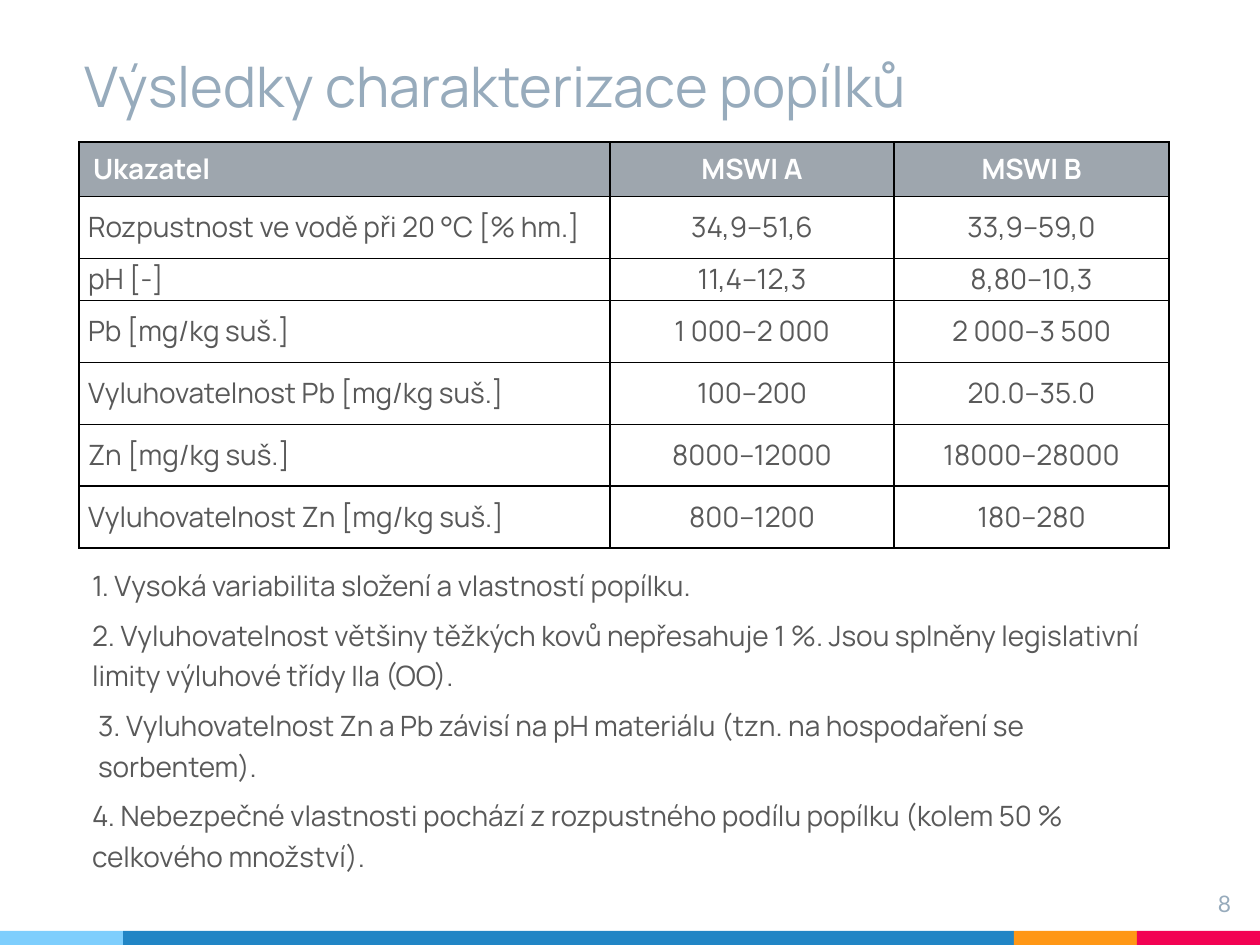
from lxml import etree
from pptx import Presentation
from pptx.dml.color import RGBColor
from pptx.enum.shapes import MSO_SHAPE
from pptx.enum.text import MSO_ANCHOR, MSO_AUTO_SIZE, PP_ALIGN
from pptx.oxml.ns import qn
from pptx.util import Pt

RECT = MSO_SHAPE.RECTANGLE
TOP, MIDDLE, BOTTOM = MSO_ANCHOR.TOP, MSO_ANCHOR.MIDDLE, MSO_ANCHOR.BOTTOM
LEFT, CENTER, RIGHT = PP_ALIGN.LEFT, PP_ALIGN.CENTER, PP_ALIGN.RIGHT
NO_FIT = MSO_AUTO_SIZE.NONE

PX = 914400 / 126
COLORS = {
    "title": "97ABBC", "text": "595959", "header": "9EA6AE", "white": "FFFFFF",
    "border": "000000", "sky": "7ECEFD", "blue": "2185C5", "orange": "FF9715",
    "red": "F20253",
}
BANDS = [("sky", 123), ("blue", 891), ("orange", 123), ("red", 123)]
COLUMNS = [531, 284, 275]
ROW_HEIGHTS = [49, 62, 42, 62, 62, 62, 62]
ROWS = [
    ("Ukazatel", "MSWI A", "MSWI B"),
    ("Rozpustnost ve vodě při 20 °C [% hm.]", "34,9–51,6", "33,9–59,0"),
    ("pH [-]", "11,4–12,3", "8,80–10,3"),
    ("Pb [mg/kg suš.]", "1 000–2 000", "2 000–3 500"),
    ("Vyluhovatelnost Pb [mg/kg suš.]", "100–200", "20.0–35.0"),
    ("Zn [mg/kg suš.]", "8000–12000", "18000–28000"),
    ("Vyluhovatelnost Zn [mg/kg suš.]", "800–1200", "180–280"),
]
FINDINGS = [
    ("1. Vysoká variabilita složení a vlastností popílku.", 0),
    ("2. Vyluhovatelnost většiny těžkých kovů nepřesahuje 1 %. Jsou splněny "
     "legislativní limity výluhové třídy IIa (OO).", 0),
    ("3. Vyluhovatelnost Zn a Pb závisí na pH materiálu (tzn. na hospodaření se "
     "sorbentem).", 6),
    ("4. Nebezpečné vlastnosti pochází z rozpustného podílu popílku (kolem 50 % "
     "celkového množství).", 0),
]


def px(n):
    """Turn pixels into EMU."""
    return round(n * PX)


def rgb(name):
    """Look up a colour by name."""
    return RGBColor.from_string(COLORS[name])


def place(s, x, y, w, h):
    """Move and size a shape."""
    s.left, s.top, s.width, s.height = px(x), px(y), px(w), px(h)


def set_frame(tf, anchor, dx, dy):
    """Set the anchor, wrapping and insets of a text frame."""
    tf.word_wrap, tf.auto_size, tf.vertical_anchor = True, NO_FIT, anchor
    tf.margin_left = tf.margin_right = px(dx)
    tf.margin_top = tf.margin_bottom = px(dy)


def add_run(p, text, size, color, font="Manrope", bold=False, align=LEFT):
    """Add a formatted run to a paragraph."""
    p.alignment = align
    r = p.add_run()
    r.text = text
    r.font.name, r.font.size, r.font.bold = font, Pt(size), bold
    r.font.color.rgb = rgb(color)


def add_title(slide, x, y, w, h):
    """Fill the title placeholder."""
    s = slide.shapes.title
    place(s, x, y, w, h)
    set_frame(s.text_frame, BOTTOM, 13, 13)
    add_run(s.text_frame.paragraphs[0], "Výsledky charakterizace popílků", 32, "title")


def add_borders(cell):
    """Draw a thin line on each side of a cell."""
    tcPr = cell._tc.get_or_add_tcPr()
    for i, side in enumerate(("a:lnL", "a:lnR", "a:lnT", "a:lnB")):
        ln = etree.Element(qn(side), w=str(Pt(0.75)))
        fill = etree.SubElement(ln, qn("a:solidFill"))
        etree.SubElement(fill, qn("a:srgbClr"), val=COLORS["border"])
        tcPr.insert(i, ln)


def add_results(slide, x, y):
    """Build the table of ash properties."""
    frame = slide.shapes.add_table(len(ROWS), len(COLUMNS), px(x), px(y),
                                   px(sum(COLUMNS)), px(sum(ROW_HEIGHTS)))
    table = frame.table
    for column, width in zip(table.columns, COLUMNS):
        column.width = px(width)
    for i, (row, height) in enumerate(zip(ROWS, ROW_HEIGHTS)):
        table.rows[i].height = px(height)
        head = i == 0
        for j, text in enumerate(row):
            cell = table.cell(i, j)
            cell.fill.solid()
            cell.fill.fore_color.rgb = rgb("header" if head else "white")
            add_borders(cell)
            cell.vertical_anchor = TOP if head else MIDDLE
            cell.margin_left = px(14 if head and j == 0 else 9)
            cell.margin_right = px(9)
            cell.margin_top = cell.margin_bottom = px(8 if head else 0)
            p = cell.text_frame.paragraphs[0]
            p.space_after = Pt(3 if head else 0)
            add_run(p, text, 16, "white" if head else "text", bold=head,
                    align=CENTER if j else LEFT)


def add_findings(slide, x, y, w, h):
    """Fill the body placeholder with the findings."""
    s = slide.placeholders[1]
    place(s, x, y, w, h)
    tf = s.text_frame
    set_frame(tf, TOP, 13, 6)
    for i, (text, indent) in enumerate(FINDINGS):
        p = tf.paragraphs[0] if i == 0 else tf.add_paragraph()
        p.line_spacing, p.space_before, p.space_after = 1.2, Pt(0), Pt(5.5)
        pPr = p._p.get_or_add_pPr()
        pPr.set("marL", str(px(indent)))
        pPr.set("indent", "0")
        etree.SubElement(pPr, qn("a:buNone"))
        add_run(p, text, 16, "text")


def add_page_number(slide, x, y, w, h):
    """Write the page number."""
    tf = slide.shapes.add_textbox(px(x), px(y), px(w), px(h)).text_frame
    set_frame(tf, TOP, 13, 13)
    add_run(tf.paragraphs[0], "8", 13, "title", font="Lato", align=RIGHT)


def add_bands(slide, x, y, h):
    """Lay the coloured bands side by side."""
    for color, w in BANDS:
        s = slide.shapes.add_shape(RECT, px(x), px(y), px(w), px(h))
        s.shadow.inherit = False
        s.fill.solid()
        s.fill.fore_color.rgb = rgb(color)
        s.line.fill.background()
        x += w


def main():
    """Build and save the slide."""
    prs = Presentation()
    prs.slide_width, prs.slide_height = px(1260), px(945)
    slide = prs.slides.add_slide(prs.slide_layouts[1])
    add_bands(slide, 0, 931, 14)
    add_title(slide, 72, 0, 1096, 132)
    add_results(slide, 79, 142)
    add_findings(slide, 79, 556, 1090, 321)
    add_page_number(slide, 1168, 877, 76, 58)
    prs.save("out.pptx")


if __name__ == "__main__":
    main()
